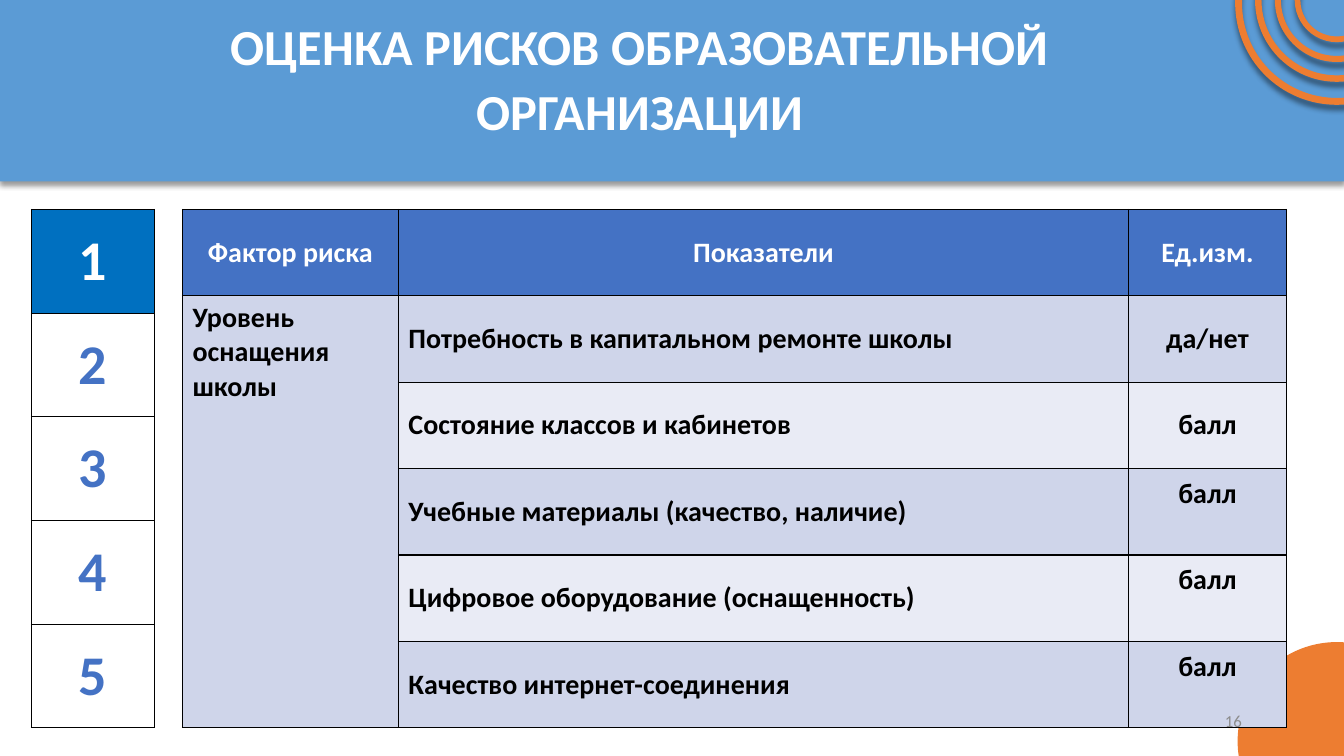
"""Build the slide on risk assessment of an educational organisation."""
from dataclasses import dataclass

from lxml.etree import SubElement
from pptx import Presentation
from pptx.dml.color import RGBColor
from pptx.enum.shapes import MSO_SHAPE
from pptx.enum.text import MSO_ANCHOR, PP_ALIGN
from pptx.oxml.ns import qn
from pptx.util import Cm, Pt

TITLE = "ОЦЕНКА РИСКОВ ОБРАЗОВАТЕЛЬНОЙ ОРГАНИЗАЦИИ"
HEADINGS = ("Фактор риска", "Показатели", "Ед.изм.")
FACTOR = "Уровень оснащения школы"
INDICATORS = [
    ("Потребность в капитальном ремонте школы", "да/нет"),
    ("Состояние классов и кабинетов", "балл"),
    ("Учебные материалы (качество, наличие)", "балл"),
    ("Цифровое оборудование (оснащенность)", "балл"),
    ("Качество интернет-соединения", "балл"),
]
RAISED_UNITS_FROM = 3
STEPS = ("1", "2", "3", "4", "5")
ACTIVE_STEP = "1"
PAGE_NUMBER = "16"
RINGS = [(5, 0.08), (4, 0), (3, 0), (2, 0)]
RING_CENTER = 33.69
TABLE_TOP, TABLE_HEIGHT = 5.28, 13.06
RISK_COLUMNS = (5.44, 18.4, 3.98)
STEP_COLUMNS = (3.11,)


@dataclass(frozen=True)
class Theme:
    font: str = "Calibri"
    banner: str = "5B9BD5"
    accent: str = "ED7D31"
    header: str = "4472C4"
    bands: tuple = ("CFD5EA", "E9EBF5")
    active: str = "0070C0"
    light: str = "FFFFFF"
    dark: str = "000000"
    muted: str = "8C8C8C"
    title_size: int = 36
    step_size: int = 40
    body_size: int = 20
    number_size: int = 12


THEME = Theme()


def color(value):
    return RGBColor.from_string(value)


def write(frame, text, size, ink, align, bold=True):
    para = frame.paragraphs[0]
    para.text = text
    para.alignment = align
    font = para.font
    font.name, font.size, font.bold = THEME.font, Pt(size), bold
    font.color.rgb = color(ink)
    return para


def add_text(page, area, *style, **options):
    box = page.shapes.add_textbox(*map(Cm, area))
    box.text_frame.word_wrap = True
    box.text_frame.vertical_anchor = MSO_ANCHOR.MIDDLE
    return write(box.text_frame, *style, **options)


def add_plain(page, kind, area, fill):
    shape = page.shapes.add_shape(kind, *map(Cm, area))
    shape.shadow.inherit = False
    shape.fill.solid()
    shape.fill.fore_color.rgb = color(fill)
    shape.line.fill.background()
    return shape


def add_shadow(shape, distance, opacity):
    effects = shape._element.spPr.find(qn("a:effectLst"))
    shadow = SubElement(effects, qn("a:outerShdw"), blurRad=str(Pt(4)),
                        dist=str(Pt(distance)), dir="5400000", rotWithShape="0")
    tint = SubElement(shadow, qn("a:srgbClr"), val=THEME.dark)
    SubElement(tint, qn("a:alpha"), val=str(opacity * 1000))


def add_grid(page, left, columns, row_count):
    frame = page.shapes.add_table(row_count, len(columns), Cm(left), Cm(TABLE_TOP),
                                  Cm(sum(columns)), Cm(TABLE_HEIGHT))
    grid = frame.table
    for column, width in zip(grid.columns, columns):
        column.width = Cm(width)
    for row in grid.rows:
        row.height = Cm(TABLE_HEIGHT / row_count)
    return grid


def fill_cell(cell, fill):
    properties = cell._tc.get_or_add_tcPr()
    for side in ("lnL", "lnR", "lnT", "lnB"):
        line = SubElement(properties, qn(f"a:{side}"), w=str(Pt(1)))
        SubElement(SubElement(line, qn("a:solidFill")), qn("a:srgbClr"), val=THEME.dark)
    cell.fill.solid()
    cell.fill.fore_color.rgb = color(fill)
    cell.vertical_anchor = MSO_ANCHOR.MIDDLE


def add_decor(page):
    banner = add_plain(page, MSO_SHAPE.RECTANGLE, (0, 0, 33.87, 4.57), THEME.banner)
    add_shadow(banner, 3, 40)
    add_plain(page, MSO_SHAPE.OVAL, (31.19, 16.18, 5, 5), THEME.accent)
    for diameter, middle in RINGS:
        radius = diameter / 2
        area = (RING_CENTER - radius, middle - radius, diameter, diameter)
        ring = add_plain(page, MSO_SHAPE.DONUT, area, THEME.accent)
        ring.adjustments[0] = 0.01
        ring.line.color.rgb = color(THEME.accent)
        ring.line.width = Pt(3.5)
        add_shadow(ring, 4, 43)


def add_risks(page):
    rows = [HEADINGS] + [("", *indicator) for indicator in INDICATORS]
    grid = add_grid(page, 4.6, RISK_COLUMNS, len(rows))
    for row, texts in enumerate(rows):
        for column, text in enumerate(texts):
            cell = grid.cell(row, column)
            band = THEME.bands[0 if column == 0 else (row - 1) % 2]
            fill_cell(cell, band if row else THEME.header)
            centered = row == 0 or column == 2
            write(cell.text_frame, text, THEME.body_size,
                  THEME.dark if row else THEME.light,
                  PP_ALIGN.CENTER if centered else PP_ALIGN.LEFT)
            if column == 2 and row >= RAISED_UNITS_FROM:
                cell.margin_bottom = Cm(1.03)
    factor = grid.cell(1, 0)
    factor.merge(grid.cell(len(INDICATORS), 0))
    factor.vertical_anchor = MSO_ANCHOR.TOP
    write(factor.text_frame, FACTOR, THEME.body_size, THEME.dark, PP_ALIGN.LEFT)


def add_steps(page):
    grid = add_grid(page, 0.79, STEP_COLUMNS, len(STEPS))
    for row, step in enumerate(STEPS):
        active = step == ACTIVE_STEP
        cell = grid.cell(row, 0)
        fill_cell(cell, THEME.active if active else THEME.light)
        write(cell.text_frame, step, THEME.step_size,
              THEME.light if active else THEME.header, PP_ALIGN.CENTER)


def main():
    deck = Presentation()
    deck.slide_width, deck.slide_height = Cm(33.87), Cm(19.05)
    page = deck.slides.add_slide(deck.slide_layouts[6])
    add_decor(page)
    title = add_text(page, (1.52, 0.36, 29.21, 3.1), TITLE, THEME.title_size,
                     THEME.light, PP_ALIGN.CENTER)
    title.line_spacing = 1.07
    title.space_after = Pt(8)
    add_risks(page)
    add_steps(page)
    add_text(page, (23.93, 17.65, 7.62, 1.02), PAGE_NUMBER, THEME.number_size,
             THEME.muted, PP_ALIGN.RIGHT, bold=False)
    deck.save("out.pptx")


if __name__ == "__main__":
    main()
